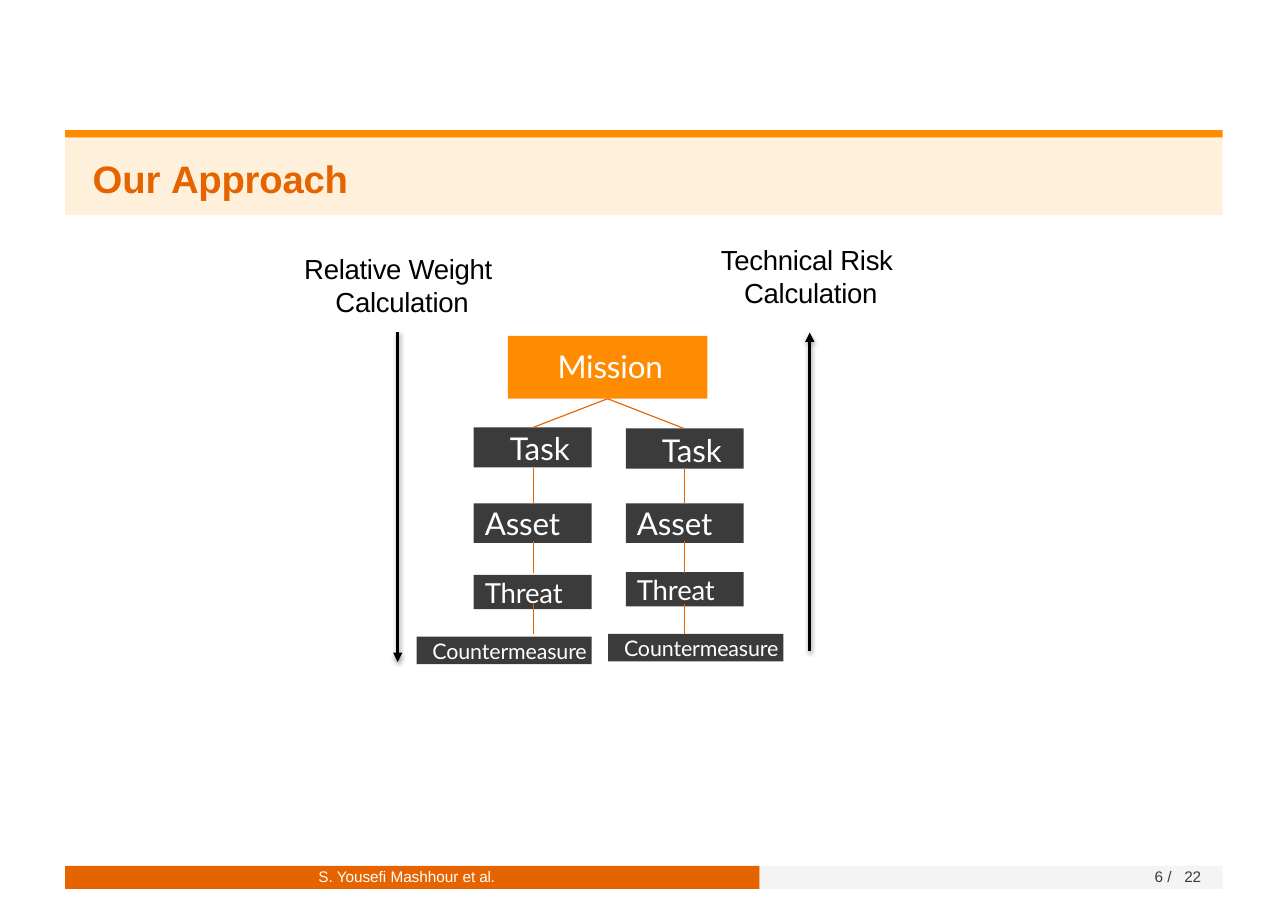
from dataclasses import dataclass
from typing import NamedTuple

from lxml.etree import SubElement
from pptx import Presentation
from pptx.dml.color import RGBColor
from pptx.enum.shapes import MSO_CONNECTOR as Connector, MSO_SHAPE as Preset
from pptx.enum.text import MSO_ANCHOR as Anchor, PP_ALIGN as Align
from pptx.oxml.ns import qn
from pptx.util import Emu, Inches, Pt

WIDTH, HEIGHT = Inches(11.69), Inches(8.27)
ORANGE, RUST, CREAM = "FF8C00", "E56400", "FFF0DC"
CHARCOAL, PALE, WHITE, BLACK = "3B3B3B", "F4F4F4", "FFFFFF", "000000"


class Area(NamedTuple):
    left: float
    top: float
    width: float
    height: float


class Piece(NamedTuple):
    text: str
    tracking: int = 0


@dataclass
class Wording:
    lines: list[list[Piece]]
    size: float
    color: str
    font: str = "Arial"
    bold: bool = False
    align: Align = Align.LEFT
    insets: tuple[float, float] = (0, 0)
    spacing: float | None = None
    second_indent: float = 0


@dataclass
class Level:
    label: str
    lefts: tuple[float, float]
    tops: tuple[float, float]
    width: float
    height: float
    size: float
    align: Align
    insets: tuple[float, float]
    tracking: int = -10


class Link(NamedTuple):
    start: tuple[float, float]
    end: tuple[float, float]


def across(share: float) -> Emu:
    return Emu(round(WIDTH * share / 100))


def down(share: float) -> Emu:
    return Emu(round(HEIGHT * share / 100))


def place(area: Area) -> tuple[Emu, Emu, Emu, Emu]:
    return across(area.left), down(area.top), across(area.width), down(area.height)


def paint(color_format, color: str) -> None:
    color_format.rgb = RGBColor.from_string(color)


def apply(target, values: dict) -> None:
    for name, value in values.items():
        setattr(target, name, value)


def write(frame, wording: Wording) -> None:
    side, top = wording.insets
    apply(frame, {
        "word_wrap": True, "vertical_anchor": Anchor.TOP,
        "margin_left": across(side), "margin_top": down(top),
        "margin_right": 0, "margin_bottom": 0,
    })
    for index, pieces in enumerate(wording.lines):
        paragraph = frame.add_paragraph() if index else frame.paragraphs[0]
        paragraph.alignment = wording.align
        if wording.spacing:
            paragraph.line_spacing = Pt(wording.spacing)
        if index and wording.second_indent:
            indent = across(wording.second_indent)
            paragraph._p.get_or_add_pPr().set("marL", str(indent))
        for piece in pieces:
            run = paragraph.add_run()
            run.text = piece.text
            apply(run.font, {"name": wording.font, "size": Pt(wording.size),
                             "bold": wording.bold})
            paint(run.font.color, wording.color)
            if piece.tracking:
                run.font._element.set("spc", str(piece.tracking))


def add_block(slide, area: Area, color: str, wording: Wording | None = None) -> None:
    block = slide.shapes.add_shape(Preset.RECTANGLE, *place(area))
    block.shadow.inherit = False
    block.fill.solid()
    paint(block.fill.fore_color, color)
    block.line.fill.background()
    if wording:
        write(block.text_frame, wording)


def add_caption(slide, area: Area, wording: Wording) -> None:
    write(slide.shapes.add_textbox(*place(area)).text_frame, wording)


def add_link(slide, link: Link, color: str, weight: float, arrow: bool = False) -> None:
    (x1, y1), (x2, y2) = link
    connector = slide.shapes.add_connector(
        Connector.STRAIGHT, across(x1), down(y1), across(x2), down(y2))
    paint(connector.line.color, color)
    connector.line.width = Pt(weight)
    effects = SubElement(connector._element.spPr, qn("a:effectLst"))
    if arrow:
        SubElement(connector.line._get_or_add_ln(), qn("a:tailEnd"), type="triangle")
        shadow = SubElement(effects, qn("a:outerShdw"), blurRad=str(Pt(3.1)),
                            dist=str(Pt(1.6)), dir="5400000", rotWithShape="0")
        tint = SubElement(shadow, qn("a:srgbClr"), val=color)
        SubElement(tint, qn("a:alpha"), val="38000")


BARS = [
    (Area(5.05, 14.27, 89.87, 0.85), ORANGE),
    (Area(5.05, 15.11, 89.87, 8.47), CREAM),
    (Area(5.05, 95.04, 53.93, 2.54), RUST),
    (Area(58.98, 95.04, 35.94, 2.54), PALE),
]

CAPTIONS = [
    (Area(5.05, 16.81, 89.87, 5.32), Wording(
        [[Piece("Our "), Piece("Approach", -10)]], 25, RUST, bold=True,
        insets=(2.14, 0.24))),
    (Area(24.64, 95.41, 14.9, 2.06), Wording(
        [[Piece("S. Yousefi Mashhour et "), Piece("al.", -20)]], 10, WHITE,
        insets=(0.09, 0), spacing=10.9)),
    (Area(89.56, 95.41, 4.5, 1.81), Wording(
        [[Piece("6 "), Piece("/ ", 280), Piece("22", -20)]], 10, CHARCOAL,
        insets=(0.09, 0), spacing=10.9)),
]

DIRECTIONS = [
    ("Relative Weight", Area(22.33, 27.09, 17.19, 8.59),
     Link((30.88, 36.4), (30.88, 72.67))),
    ("Technical Risk", Area(54.06, 26.12, 17.19, 8.59),
     Link((62.87, 71.46), (62.87, 36.52))),
]

BRANCHES = (36.78, 48.59)
STEMS = (41.4, 53.12)
LEVELS = [
    Level("Task", BRANCHES, (46.92, 47.04), 9.15, 4.4, 20.5, Align.CENTER, (1.11, 0.24), 0),
    Level("Asset", BRANCHES, (55.26, 55.26), 9.15, 4.35, 20.5, Align.LEFT, (0.86, 0.12)),
    Level("Threat", BRANCHES, (63.12, 62.82), 9.15, 3.75, 18, Align.LEFT, (0.86, 0.12)),
    Level("Countermeasure", (32.34, 47.22), (69.89, 69.59), 13.6, 3.02, 14,
          Align.CENTER, (0.86, 0.12)),
]
STEM_SPANS = [(51.33, 55.26), (59.43, 62.88), (66.32, 69.65)]
MISSION = Area(39.44, 36.88, 15.48, 6.89)


def draw_tree(slide) -> None:
    add_block(slide, MISSION, ORANGE, Wording(
        [[Piece("Mission", -10)]], 20.5, WHITE, "Lato", insets=(3.85, 1.21)))
    for level in LEVELS:
        for left, top in zip(level.lefts, level.tops):
            add_block(slide, Area(left, top, level.width, level.height), CHARCOAL, Wording(
                [[Piece(level.label, level.tracking)]], level.size, WHITE, "Lato",
                align=level.align, insets=level.insets))
    root = (MISSION.left + MISSION.width / 2, MISSION.top + MISSION.height)
    for stem, top in zip(STEMS, LEVELS[0].tops):
        add_link(slide, Link(root, (stem, top)), RUST, 0.75)
        for start, end in STEM_SPANS:
            add_link(slide, Link((stem, start), (stem, end)), RUST, 0.75)


def main() -> None:
    deck = Presentation()
    apply(deck, {"slide_width": WIDTH, "slide_height": HEIGHT})
    slide = deck.slides.add_slide(deck.slide_layouts[6])
    for area, color in BARS:
        add_block(slide, area, color)
    for area, wording in CAPTIONS:
        add_caption(slide, area, wording)
    draw_tree(slide)
    for heading, area, arrow in DIRECTIONS:
        add_link(slide, arrow, BLACK, 2, arrow=True)
        add_caption(slide, area, Wording(
            [[Piece(heading, -20)], [Piece("Calculation", -20)]], 18, BLACK,
            align=Align.CENTER, insets=(0, 0.6), second_indent=0.6))
    deck.save("out.pptx")


if __name__ == "__main__":
    main()
